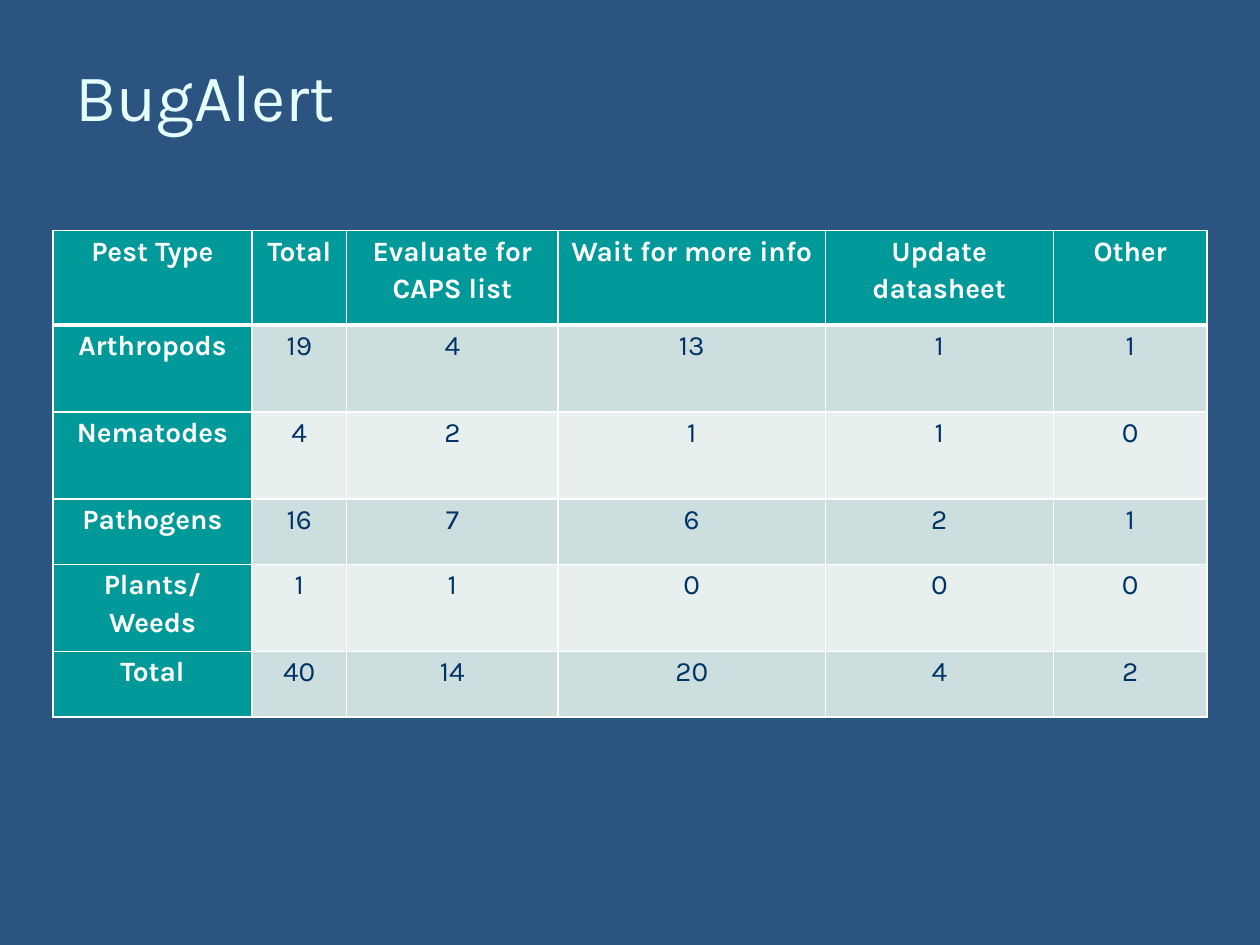
"""Build the pest alert summary table slide."""
import pptx
import pptx.util
import pptx.dml.color
import pptx.enum.text
from lxml import etree
from pptx.oxml.ns import qn

Inches, Pt = pptx.util.Inches, pptx.util.Pt
RGB = pptx.dml.color.RGBColor
Align, Anchor = pptx.enum.text.PP_ALIGN, pptx.enum.text.MSO_ANCHOR

TITLE = "BugAlert"
ROWS = [
    ("Pest Type", "Total", "Evaluate for CAPS list", "Wait for more info",
     "Update datasheet", "Other"),
    ("Arthropods", 19, 4, 13, 1, 1),
    ("Nematodes", 4, 2, 1, 1, 0),
    ("Pathogens", 16, 7, 6, 2, 1),
    ("Plants/ Weeds", 1, 1, 0, 0, 0),
    ("Total", 40, 14, 20, 4, 2),
]
WIDTHS = [1.58, 0.75, 1.68, 2.12, 1.81, 1.22]
HEIGHTS = [0.75, 0.69, 0.69, 0.52, 0.69, 0.52]

FONT = "Karla"
BLUE = RGB(0x2B, 0x54, 0x81)
ICE = RGB(0xE5, 0xFF, 0xFF)
TEAL = RGB(0x00, 0x99, 0x99)
NAVY = RGB(0x00, 0x33, 0x66)
WHITE = RGB(0xFF, 0xFF, 0xFF)
BANDS = [RGB(0xE7, 0xEF, 0xEF), RGB(0xCC, 0xDE, 0xDE)]


def write(frame, text, size=16, color=NAVY, bold=False, align=Align.CENTER,
          space=1.15):
    para = frame.paragraphs[0]
    para.alignment = align
    para.line_spacing = space
    run = para.add_run()
    run.text = str(text)
    font = run.font
    font.name, font.size, font.bold = FONT, Pt(size), bold
    font.color.rgb = color


def edge(cell, side, width):
    line = etree.SubElement(cell._tc.get_or_add_tcPr(), qn("a:ln" + side),
                            w=str(Pt(width)))
    fill = etree.SubElement(line, qn("a:solidFill"))
    etree.SubElement(fill, qn("a:srgbClr"), val=str(WHITE))


def style(cell, row, col):
    head = row == 0 or col == 0
    cell.margin_left = cell.margin_right = Inches(0.07)
    cell.margin_top = cell.margin_bottom = 0
    cell.vertical_anchor = Anchor.TOP
    thick = {(0, "B"), (1, "T")}
    for side in "LRTB":
        edge(cell, side, 3 if (row, side) in thick else 1)
    cell.fill.solid()
    cell.fill.fore_color.rgb = TEAL if head else BANDS[row % 2]
    write(cell.text_frame, ROWS[row][col], bold=head,
          color=WHITE if head else NAVY)


def main():
    deck = pptx.Presentation()
    deck.slide_width, deck.slide_height = Inches(10), Inches(7.5)
    slide = deck.slides.add_slide(deck.slide_layouts[6])
    slide.background.fill.solid()
    slide.background.fill.fore_color.rgb = BLUE

    box = slide.shapes.add_textbox(Inches(0.5), Inches(0.25), Inches(9),
                                   Inches(1))
    box.text_frame.word_wrap = True
    box.text_frame.vertical_anchor = Anchor.MIDDLE
    write(box.text_frame, TITLE, size=38, color=ICE, align=Align.LEFT, space=1)

    table = slide.shapes.add_table(
        len(ROWS), len(WIDTHS), Inches(0.42), Inches(1.83),
        Inches(sum(WIDTHS)), Inches(sum(HEIGHTS))).table
    for col, width in zip(table.columns, WIDTHS):
        col.width = Inches(width)
    for row, height in enumerate(HEIGHTS):
        table.rows[row].height = Inches(height)
        for col in range(len(WIDTHS)):
            style(table.cell(row, col), row, col)

    deck.save("out.pptx")


if __name__ == "__main__":
    main()
